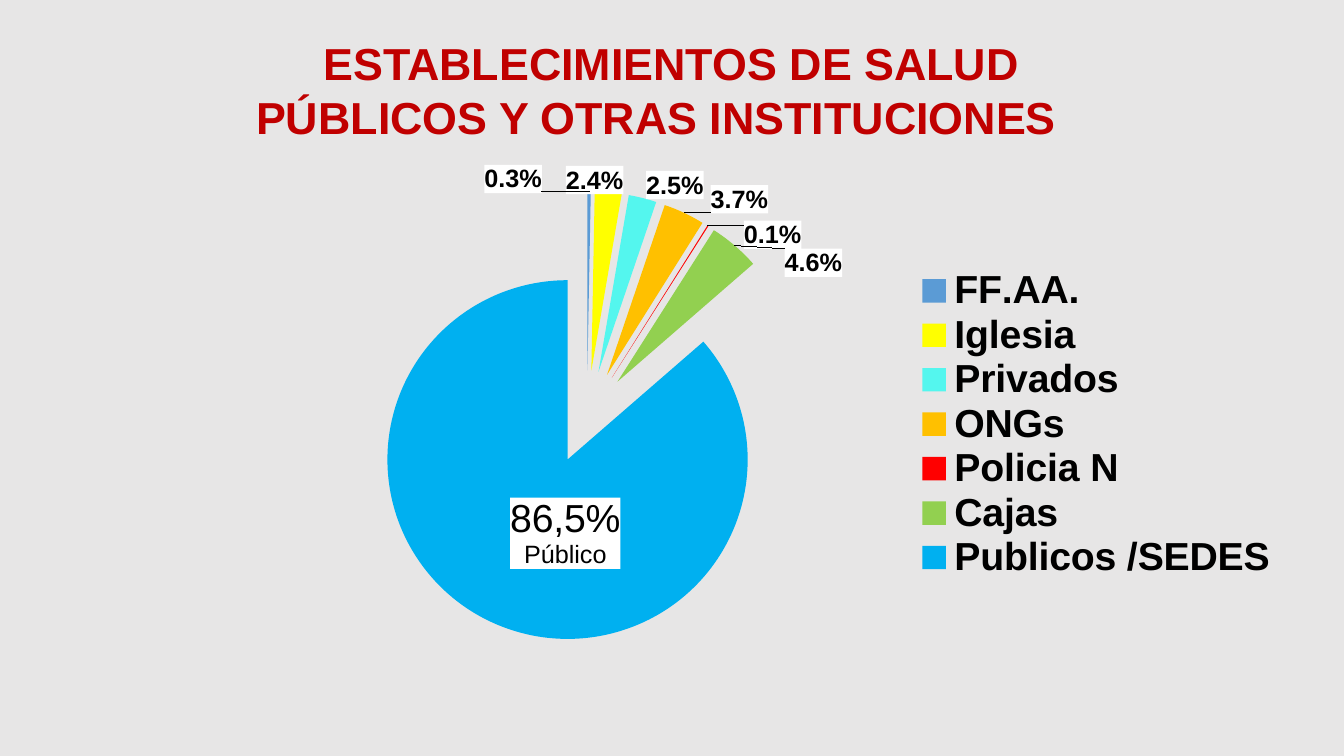
from dataclasses import dataclass

from lxml.etree import SubElement
from pptx import Presentation
from pptx.chart.chart import Chart
from pptx.chart.data import CategoryChartData
from pptx.dml.color import RGBColor
from pptx.enum.chart import XL_CHART_TYPE, XL_LABEL_POSITION, XL_LEGEND_POSITION
from pptx.enum.text import MSO_ANCHOR, PP_ALIGN
from pptx.oxml import parse_xml
from pptx.oxml.ns import nsdecls, qn
from pptx.slide import Slide
from pptx.text.text import Font
from pptx.util import Pt

EMU_PER_PX = 9072  # 100.8 px to the inch


@dataclass(frozen=True)
class Theme:
    background: str = "E7E6E6"
    title: str = "C00000"
    text: str = "000000"
    label_fill: str = "FFFFFF"
    font: str = "Arial"
    title_size: int = 32
    legend_size: int = 28
    label_size: int = 18
    percent_format: str = "0.0%"


@dataclass(frozen=True)
class Box:
    left: int
    top: int
    width: int
    height: int

    def emu(self) -> tuple[int, ...]:
        return tuple(px(v) for v in (self.left, self.top, self.width, self.height))


@dataclass(frozen=True)
class Sector:
    """A pie slice; dx and dy move its label away from the default place."""
    name: str
    share: float
    color: str
    dx: int
    dy: int


THEME = Theme()
TITLE_BOX = Box(246, 31, 821, 119)
CHART_BOX = Box(144, 157, 1149, 540)
PLOT_BOX = Box(360, 189, 454, 454)
LEGEND_BOX = Box(910, 266, 372, 314)
TITLE_LINES = [("ESTABLECIMIENTOS DE SALUD", 30), ("PÚBLICOS Y OTRAS INSTITUCIONES", 0)]
EXPLOSION = 26
SECTORS = [
    Sector("FF.AA.", 0.003, "5B9BD5", -76, 8),
    Sector("Iglesia", 0.024, "FFFF00", -43, 8),
    Sector("Privados", 0.025, "54F6EE", 2, 7),
    Sector("ONGs", 0.037, "FFC000", 24, 6),
    Sector("Policia N", 0.001, "FF0000", 33, 28),
    Sector("Cajas", 0.046, "92D050", 46, 36),
    Sector("Publicos /SEDES", 0.865, "00B0F0", 35, -8),
]
PUBLIC_LABEL = [("86,5%", THEME.legend_size), ("Público", THEME.label_size)]


def px(value: int) -> int:
    return value * EMU_PER_PX


def style_font(font: Font, size: int, color: str = THEME.text, bold: bool = True) -> None:
    for name, value in {"name": THEME.font, "size": Pt(size), "bold": bold}.items():
        setattr(font, name, value)
    font.color.rgb = RGBColor.from_string(color)


def add_title(slide: Slide) -> None:
    tf = slide.shapes.add_textbox(*TITLE_BOX.emu()).text_frame
    tf.word_wrap = True
    tf.vertical_anchor = MSO_ANCHOR.TOP
    for i, (text, indent) in enumerate(TITLE_LINES):
        p = tf.paragraphs[0] if i == 0 else tf.add_paragraph()
        p.alignment = PP_ALIGN.CENTER
        p._p.get_or_add_pPr().set("marL", str(px(indent)))
        r = p.add_run()
        r.text = text
        style_font(r.font, THEME.title_size, THEME.title)


def layout_xml(values: dict[str, float], modes: dict[str, str]):
    """Build a manual chart layout from fractions of the chart."""
    layout = parse_xml(f"<c:layout {nsdecls('c')}><c:manualLayout/></c:layout>")
    for tag, value in {**modes, **values}.items():
        text = value if isinstance(value, str) else f"{value:.4f}"
        SubElement(layout[0], qn(f"c:{tag}")).set("val", text)
    return layout


def box_layout(box: Box, modes: dict[str, str]):
    return layout_xml({
        "x": (box.left - CHART_BOX.left) / CHART_BOX.width,
        "y": (box.top - CHART_BOX.top) / CHART_BOX.height,
        "w": box.width / CHART_BOX.width,
        "h": box.height / CHART_BOX.height,
    }, modes)


def place_parts(chart: Chart) -> None:
    edges = {"xMode": "edge", "yMode": "edge"}
    plot_area = chart._chartSpace.chart.plotArea
    for old in plot_area.findall(qn("c:layout")):
        plot_area.remove(old)
    plot_area.insert(0, box_layout(PLOT_BOX, {"layoutTarget": "inner", **edges}))
    legend = chart.legend._element
    for old in legend.findall(qn("c:layout")):
        legend.remove(old)
    legend.find(qn("c:legendPos")).addnext(box_layout(LEGEND_BOX, edges))


def label_sectors(chart: Chart) -> None:
    points = chart.plots[0].series[0].points
    for i, sector in enumerate(SECTORS):
        point = points[i]
        point.format.fill.solid()
        point.format.fill.fore_color.rgb = RGBColor.from_string(sector.color)
        label = point.data_label
        if i < len(SECTORS) - 1:
            style_font(label.font, THEME.label_size)
            label.position = XL_LABEL_POSITION.OUTSIDE_END
            continue
        tf = label.text_frame
        for j, (text, size) in enumerate(PUBLIC_LABEL):
            p = tf.paragraphs[0] if j == 0 else tf.add_paragraph()
            r = p.add_run()
            r.text = text
            style_font(r.font, size, bold=False)
        label.position = XL_LABEL_POSITION.CENTER

    for sector, dlbl in zip(SECTORS, chart._chartSpace.xpath(".//c:dLbl")):
        offset = {"x": sector.dx / CHART_BOX.width, "y": sector.dy / CHART_BOX.height}
        dlbl.find(qn("c:idx")).addnext(layout_xml(offset, {}))
        following = dlbl.xpath("c:spPr|c:txPr|c:dLblPos")[0]
        following.addprevious(parse_xml(
            f'<c:numFmt {nsdecls("c")} formatCode="{THEME.percent_format}" sourceLinked="0"/>'))
        for old in dlbl.findall(qn("c:spPr")):
            dlbl.remove(old)
        dlbl.find(qn("c:numFmt")).addnext(parse_xml(
            f'<c:spPr {nsdecls("c", "a")}><a:solidFill>'
            f'<a:srgbClr val="{THEME.label_fill}"/></a:solidFill></c:spPr>'))


def add_pie(slide: Slide) -> None:
    data = CategoryChartData(number_format=THEME.percent_format)
    data.categories = [s.name for s in SECTORS]
    data.add_series("Series 1", [s.share for s in SECTORS])
    chart = slide.shapes.add_chart(XL_CHART_TYPE.PIE, *CHART_BOX.emu(), data).chart
    chart.has_title = False
    chart.has_legend = True
    chart.legend.position = XL_LEGEND_POSITION.RIGHT
    chart.legend.include_in_layout = False
    style_font(chart.font, THEME.label_size)
    style_font(chart.legend.font, THEME.legend_size)
    plot = chart.plots[0]
    plot.vary_by_categories = True
    labels = plot.series[0].data_labels
    for name, value in {"show_value": True, "number_format": THEME.percent_format,
                        "number_format_is_linked": False}.items():
        setattr(labels, name, value)
    label_sectors(chart)
    for leader in chart._chartSpace.xpath(".//c:showLeaderLines"):
        leader.set("val", "1")
    first_point = chart._chartSpace.xpath(".//c:ser/c:dPt")[0]
    first_point.addprevious(parse_xml(f'<c:explosion {nsdecls("c")} val="{EXPLOSION}"/>'))
    place_parts(chart)


def main() -> None:
    prs = Presentation()
    prs.slide_width, prs.slide_height = px(1344), px(756)
    slide = prs.slides.add_slide(prs.slide_layouts[6])
    slide.background.fill.solid()
    slide.background.fill.fore_color.rgb = RGBColor.from_string(THEME.background)
    add_title(slide)
    add_pie(slide)
    prs.save("out.pptx")


if __name__ == "__main__":
    main()
